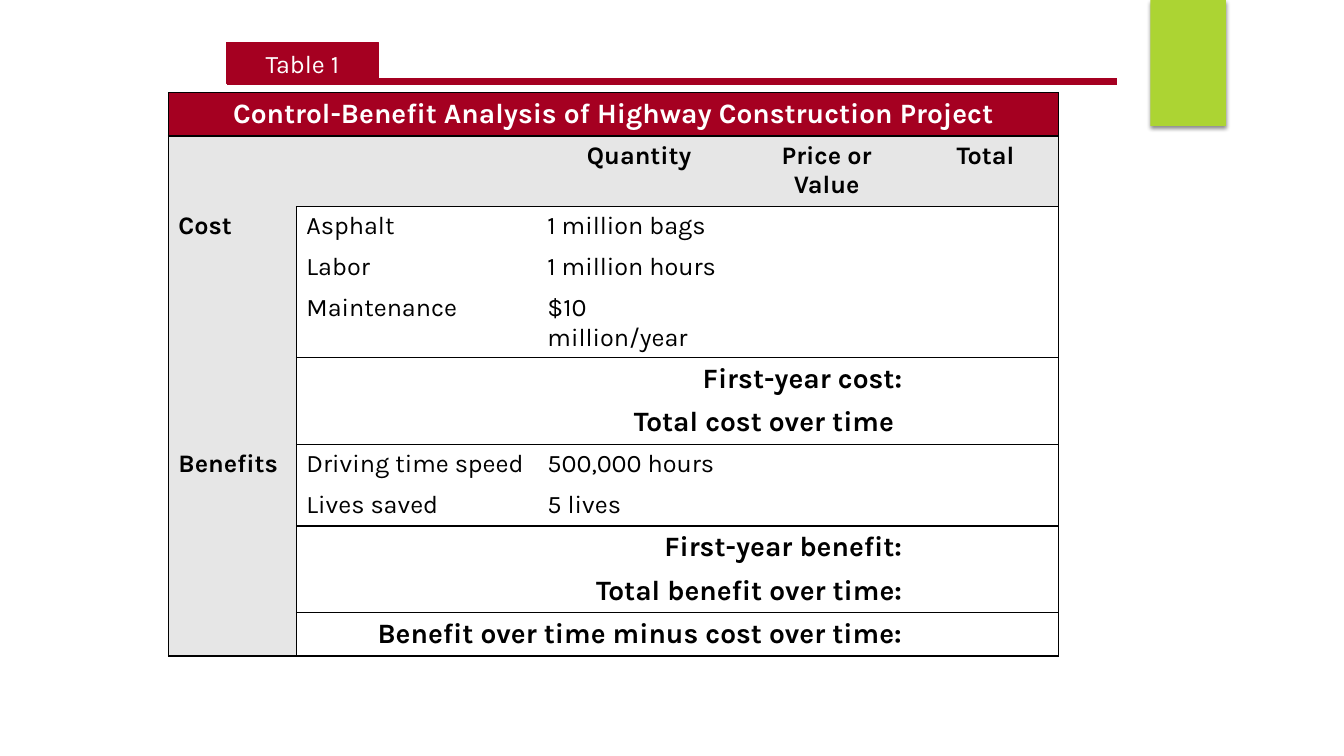
from dataclasses import dataclass

from lxml import etree
from pptx import Presentation
from pptx.dml.color import RGBColor
from pptx.enum.shapes import MSO_CONNECTOR, MSO_SHAPE
from pptx.enum.text import MSO_ANCHOR, MSO_AUTO_SIZE, PP_ALIGN
from pptx.oxml import parse_xml
from pptx.oxml.ns import nsdecls, qn
from pptx.util import Pt

PX = 9144  # one hundred px to the inch
FONT = "Karla"
LEFT, CENTER, RIGHT = PP_ALIGN.LEFT, PP_ALIGN.CENTER, PP_ALIGN.RIGHT
COLORS = {
    "red": "A50021",
    "green": "ACD433",
    "grey": "E6E6E6",
    "white": "FFFFFF",
    "black": "000000",
}


@dataclass
class Entry:
    row: int
    column: int
    text: str
    align: PP_ALIGN = LEFT
    size: int = 18
    bold: bool = False
    color: str = "black"
    right_inset: int = 10


@dataclass
class Frame:
    top: int
    left: int
    bottom: int
    right: int
    sides: str = "LRTB"


COLUMN_WIDTHS = [127, 239, 202, 170, 145]
ROW_HEIGHTS = [43, 70, 40, 40, 40, 43, 43, 40, 40, 43, 43, 43]
MERGES = [(0, 0, 0, 4), (2, 0, 4, 0), (7, 0, 8, 0)]
SUMMARY_ROWS = [5, 6, 9, 10, 11]
MERGES += [(row, 1, row, 3) for row in SUMMARY_ROWS]

# Bordered areas: heading, column heads, side column, then the blocks of rows
FRAMES = [Frame(0, 0, 0, 4), Frame(1, 0, 1, 4, "LRT"), Frame(2, 0, 11, 0, "LRB")]
FRAMES += [
    Frame(first, 1, last, 4)
    for first, last in [(2, 4), (5, 6), (7, 8), (9, 10), (11, 11)]
]

ITEMS = {
    2: ("Asphalt", "1 million bags"),
    3: ("Labor", "1 million hours"),
    4: ("Maintenance", "$10 million/year"),
    7: ("Driving time speed", "500,000 hours"),
    8: ("Lives saved", "5 lives"),
}
SUMMARIES = [
    "First-year cost:",
    "Total cost over time",
    "First-year benefit:",
    "Total benefit over time:",
    "Benefit over time minus cost over time:",
]
ENTRIES = [
    Entry(0, 0, "Control-Benefit Analysis of Highway Construction Project",
          CENTER, 20, True, "white"),
    Entry(2, 0, "Cost", bold=True),
    Entry(7, 0, "Benefits", bold=True),
]
ENTRIES += [
    Entry(1, column, text, CENTER, bold=True)
    for column, text in enumerate(["Quantity", "Price or Value", "Total"], 2)
]
ENTRIES += [
    Entry(row, column, text)
    for row, texts in ITEMS.items()
    for column, text in enumerate(texts, 1)
]
# A label without a colon keeps the space of one, so the words line up
ENTRIES += [
    Entry(row, 1, text, RIGHT, 20, True, right_inset=10 if text.endswith(":") else 18)
    for row, text in zip(SUMMARY_ROWS, SUMMARIES)
]


def rgb(name: str) -> RGBColor:
    return RGBColor.from_string(COLORS[name])


def paint(target, color: str) -> None:
    target.fill.solid()
    target.fill.fore_color.rgb = rgb(color)


def write(box, text: str, align: PP_ALIGN, size: int, bold: bool, color: str) -> None:
    para = box.paragraphs[0]
    para.alignment = align
    span = para.add_run()
    span.text = text
    formats = {"name": FONT, "size": Pt(size), "bold": bold}
    for attribute, value in formats.items():
        setattr(span.font, attribute, value)
    span.font.color.rgb = rgb(color)


def add_border(cell, side: str, visible: bool) -> None:
    properties = cell._tc.get_or_add_tcPr()
    line = etree.SubElement(properties, qn(f"a:ln{side}"), w=str(Pt(1)))
    if visible:
        fill = etree.SubElement(line, qn("a:solidFill"))
        etree.SubElement(fill, qn("a:srgbClr"), val=COLORS["black"])
    else:
        etree.SubElement(line, qn("a:noFill"))


def frame_edges(frames: list[Frame]) -> tuple[set, set]:
    horizontal, vertical = set(), set()
    for frame in frames:
        for column in range(frame.left, frame.right + 1):
            if "T" in frame.sides:
                horizontal.add((frame.top, column))
            if "B" in frame.sides:
                horizontal.add((frame.bottom + 1, column))
        for row in range(frame.top, frame.bottom + 1):
            if "L" in frame.sides:
                vertical.add((row, frame.left))
            if "R" in frame.sides:
                vertical.add((row, frame.right + 1))
    return horizontal, vertical


def add_analysis_table(page) -> None:
    table = page.shapes.add_table(
        len(ROW_HEIGHTS), len(COLUMN_WIDTHS), 167 * PX, 92 * PX,
        sum(COLUMN_WIDTHS) * PX, sum(ROW_HEIGHTS) * PX).table
    table.first_row = table.horz_banding = False
    for column, width in zip(table.columns, COLUMN_WIDTHS):
        column.width = width * PX
    for row, height in zip(table.rows, ROW_HEIGHTS):
        row.height = height * PX
    for top, left, bottom, right in MERGES:
        table.cell(top, left).merge(table.cell(bottom, right))

    # Borders and fills
    horizontal, vertical = frame_edges(FRAMES)
    for row in range(len(ROW_HEIGHTS)):
        for column in range(len(COLUMN_WIDTHS)):
            cell = table.cell(row, column)
            wide = cell.span_width if cell.is_merge_origin else 1
            tall = cell.span_height if cell.is_merge_origin else 1
            add_border(cell, "L", (row, column) in vertical)
            add_border(cell, "R", (row, column + wide) in vertical)
            add_border(cell, "T", (row, column) in horizontal)
            add_border(cell, "B", (row + tall, column) in horizontal)
            shaded = row == 1 or column == 0
            paint(cell, "red" if row == 0 else "grey" if shaded else "white")

    # Texts
    for entry in ENTRIES:
        cell = table.cell(entry.row, entry.column)
        cell.margin_right = entry.right_inset * PX
        write(cell.text_frame, entry.text, entry.align, entry.size,
              entry.bold, entry.color)


def add_corner_block(page) -> None:
    block = page.shapes.add_shape(
        MSO_SHAPE.RECTANGLE, 1141 * PX, 0, 75 * PX, 125 * PX)
    paint(block, "green")
    block.line.fill.background()
    block._element.spPr.append(parse_xml(
        f'<a:effectLst {nsdecls("a")}><a:outerShdw blurRad="{Pt(3)}" dist="{Pt(2)}" '
        f'dir="5400000" rotWithShape="0"><a:srgbClr val="{COLORS["black"]}">'
        '<a:alpha val="45000"/></a:srgbClr></a:outerShdw></a:effectLst>'))


def format_title(page) -> None:
    title = page.shapes.title
    place = {"left": 225, "top": 42, "width": 150, "height": 41}
    for attribute, value in place.items():
        setattr(title, attribute, value * PX)
    paint(title, "red")
    title.line.color.rgb = rgb("red")
    title.line.width = Pt(0.75)
    box = title.text_frame
    formats = {"margin_left": 0, "margin_right": 0, "word_wrap": True,
               "vertical_anchor": MSO_ANCHOR.MIDDLE, "auto_size": MSO_AUTO_SIZE.NONE}
    for attribute, value in formats.items():
        setattr(box, attribute, value)
    write(box, "Table 1", CENTER, 18, False, "white")


def add_title_rule(page) -> None:
    rule = page.shapes.add_connector(
        MSO_CONNECTOR.STRAIGHT, 225 * PX, 81 * PX, 1108 * PX, 81 * PX)
    rule.line.color.rgb = rgb("red")
    rule.line.width = Pt(4.5)
    etree.SubElement(rule._element.spPr, qn("a:effectLst"))


def main() -> None:
    deck = Presentation()
    deck.slide_width, deck.slide_height = 1333 * PX, 750 * PX
    page = deck.slides.add_slide(deck.slide_layouts[5])
    add_corner_block(page)
    add_analysis_table(page)
    format_title(page)
    add_title_rule(page)
    deck.save("out.pptx")


if __name__ == "__main__":
    main()
